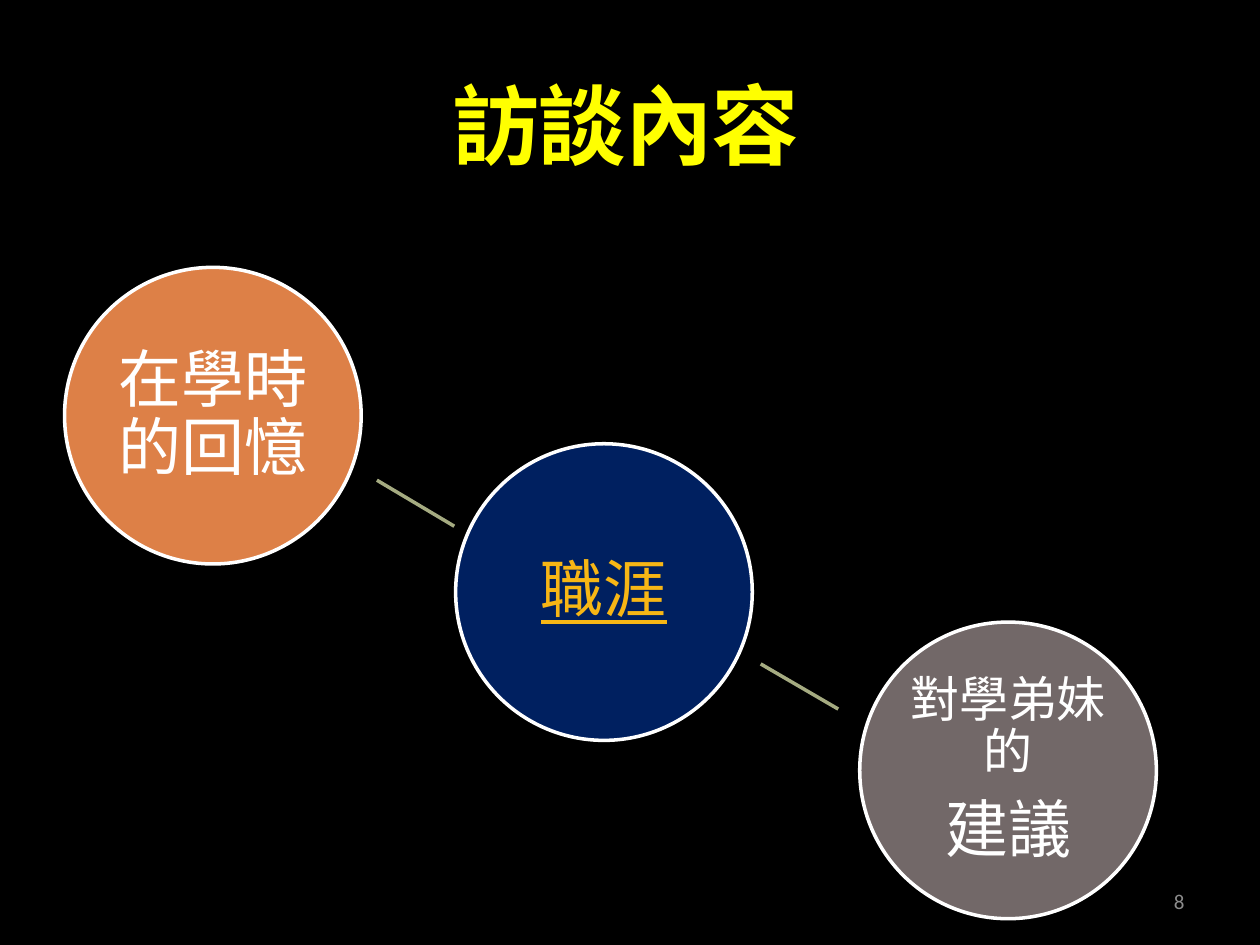
from lxml.etree import SubElement
from pptx import Presentation
from pptx.dml.color import RGBColor
from pptx.enum.shapes import MSO_CONNECTOR, MSO_SHAPE
from pptx.enum.text import MSO_ANCHOR, PP_ALIGN
from pptx.oxml.ns import qn
from pptx.util import Pt

BLACK = RGBColor(0x00, 0x00, 0x00)
WHITE = RGBColor(0xFF, 0xFF, 0xFF)
YELLOW = RGBColor(0xFF, 0xFF, 0x00)
GRAY = RGBColor(0x8C, 0x8C, 0x8C)
ORANGE = RGBColor(0xDD, 0x80, 0x47)
NAVY = RGBColor(0x00, 0x20, 0x60)
TAUPE = RGBColor(0x72, 0x68, 0x68)
GOLD = RGBColor(0xF7, 0xB6, 0x15)
SAGE = RGBColor(0xA5, 0xAB, 0x81)


class SlideBuilder:
    chinese_font = "Noto Sans CJK SC"
    number_font = "Calibri"
    diameter = 169.5
    circle_inset = 1.9
    line_width = 2

    def __init__(self, slide):
        self.slide = slide
        slide.background.fill.solid()
        slide.background.fill.fore_color.rgb = BLACK

    def style(self, paragraph, text, size, color, name, alignment):
        paragraph.text = text
        paragraph.alignment = alignment
        font = paragraph.font
        font.size = Pt(size)
        font.name = name
        font.color.rgb = color
        SubElement(font._element, qn("a:ea"), typeface=name)
        return font

    def text(self, box, text, size, color, name, alignment, anchor):
        shape = self.slide.shapes.add_textbox(*map(Pt, box))
        frame = shape.text_frame
        frame.word_wrap = True
        frame.vertical_anchor = anchor
        return self.style(frame.paragraphs[0], text, size, color, name, alignment)

    def title(self, box, text):
        font = self.text(box, text, 50, YELLOW, self.chinese_font,
                         PP_ALIGN.CENTER, MSO_ANCHOR.BOTTOM)
        font.bold = True
        font._element.set("spc", "-60")

    def page_number(self, box, text):
        self.text(box, text, 12, GRAY, self.number_font,
                  PP_ALIGN.RIGHT, MSO_ANCHOR.MIDDLE)

    def circle(self, left, top, fill, lines, color=WHITE, underline=False):
        shape = self.slide.shapes.add_shape(
            MSO_SHAPE.OVAL, Pt(left), Pt(top), Pt(self.diameter), Pt(self.diameter))
        shape.shadow.inherit = False
        shape.fill.solid()
        shape.fill.fore_color.rgb = fill
        shape.line.color.rgb = WHITE
        shape.line.width = Pt(self.line_width)
        frame = shape.text_frame
        frame.word_wrap = True
        frame.vertical_anchor = MSO_ANCHOR.MIDDLE
        frame.margin_left = frame.margin_right = Pt(self.circle_inset)
        frame.margin_top = frame.margin_bottom = Pt(self.circle_inset)
        for index, (text, size) in enumerate(lines):
            paragraph = frame.add_paragraph() if index else frame.paragraphs[0]
            font = self.style(paragraph, text, size, color,
                              self.chinese_font, PP_ALIGN.CENTER)
            font.underline = underline
            paragraph.line_spacing = 0.9
            paragraph.space_after = Pt(10)

    def link(self, *ends):
        connector = self.slide.shapes.add_connector(
            MSO_CONNECTOR.STRAIGHT, *map(Pt, ends))
        connector.line.color.rgb = SAGE
        connector.line.width = Pt(self.line_width)
        SubElement(connector._element.spPr, qn("a:effectLst"))


def main():
    presentation = Presentation()
    presentation.slide_width = Pt(720)
    presentation.slide_height = Pt(540)
    builder = SlideBuilder(presentation.slides.add_slide(presentation.slide_layouts[6]))

    builder.page_number((516, 500.4, 168, 28.8), "8")
    builder.circle(36.9, 152.8, ORANGE, [("在學時的回憶", 36)])
    builder.link(434.7, 379.4, 479, 405.2)
    builder.circle(260.4, 253.6, NAVY, [("職涯", 36)], GOLD, underline=True)
    builder.link(215.4, 274.4, 259.6, 300.7)
    builder.circle(491.3, 355.5, TAUPE, [("對學弟妹的", 28), ("建議", 36)])
    builder.title((121.7, 31, 471.6, 73.4), "訪談內容")

    presentation.save("out.pptx")


if __name__ == "__main__":
    main()
